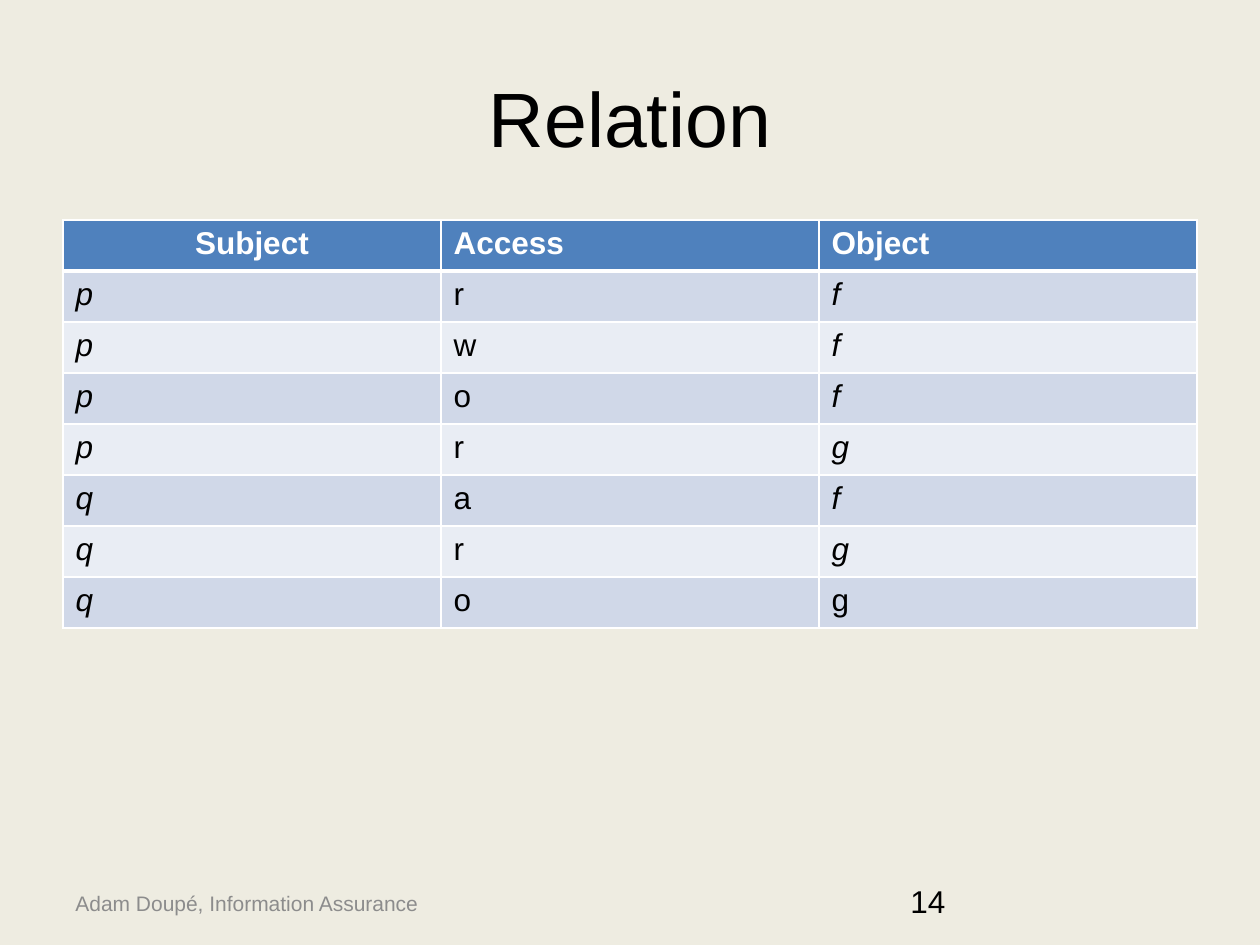
from dataclasses import dataclass

from lxml.etree import SubElement
from pptx import Presentation
from pptx.dml.color import RGBColor as RGB
from pptx.enum.text import MSO_ANCHOR as Anchor, PP_ALIGN as Align
from pptx.oxml.ns import qn
from pptx.util import Emu, Pt

PX = 914400 // 126


@dataclass(frozen=True)
class Theme:
    font: str = "Arial"
    paper: str = "EEECE1"
    ink: str = "000000"
    muted: str = "8C8C8C"
    white: str = "FFFFFF"
    header: str = "4F81BD"
    bands: tuple = ("D0D8E8", "E9EDF4")
    title_size: int = 44
    body_size: int = 18
    footer_size: int = 12
    thin: int = 1
    thick: int = 3


THEME = Theme()
HEADINGS = ("Subject", "Access", "Object")
RIGHTS = ("prf", "pwf", "pof", "prg", "qaf", "qrg", "qog")


def px(*lengths):
    return [Emu(length * PX) for length in lengths]


def write(frame, text, size, color=THEME.ink, align=Align.LEFT, **style):
    paragraph = frame.paragraphs[0]
    paragraph.alignment = align
    run = paragraph.add_run()
    run.text = text
    formats = {"name": THEME.font, "size": Pt(size), **style}
    for key, value in formats.items():
        setattr(run.font, key, value)
    run.font.color.rgb = RGB.from_string(color)


def add_title(slide, box, text):
    title = slide.shapes.title
    title.left, title.top, title.width, title.height = px(*box)
    title.text_frame.vertical_anchor = Anchor.MIDDLE
    write(title.text_frame, text, THEME.title_size, align=Align.CENTER)


def add_label(slide, box, text, size, color, anchor):
    frame = slide.shapes.add_textbox(*px(*box)).text_frame
    frame.word_wrap = True
    frame.vertical_anchor = anchor
    write(frame, text, size, color)


def add_borders(cell, top, bottom):
    widths = {"lnL": THEME.thin, "lnR": THEME.thin, "lnT": top, "lnB": bottom}
    for side, width in widths.items():
        line = SubElement(cell._tc.get_or_add_tcPr(), qn(f"a:{side}"), w=str(Pt(width)))
        fill = SubElement(line, qn("a:solidFill"))
        SubElement(fill, qn("a:srgbClr"), val=THEME.white)


def add_relation(slide, box, headings, rights):
    rows = [headings, *rights]
    table = slide.shapes.add_table(len(rows), len(headings), *px(*box)).table
    for r, row in enumerate(rows):
        for c, text in enumerate(row):
            cell = table.cell(r, c)
            # The rule between header and body is heavier
            add_borders(cell, THEME.thick if r == 1 else THEME.thin,
                        THEME.thick if r == 0 else THEME.thin)
            cell.fill.solid()
            if r == 0:
                fill, color = THEME.header, THEME.white
                style = {"bold": True, "align": Align.LEFT if c else Align.CENTER}
            else:
                fill, color = THEME.bands[(r - 1) % 2], THEME.ink
                # Subjects and objects are italic, except the last object
                last = (r, c) == (len(rows) - 1, len(row) - 1)
                style = {"bold": False, "italic": c != 1 and not last}
            cell.fill.fore_color.rgb = RGB.from_string(fill)
            write(cell.text_frame, text, THEME.body_size, color, **style)


def main():
    deck = Presentation()
    deck.slide_width, deck.slide_height = px(1260, 945)
    slide = deck.slides.add_slide(deck.slide_layouts[5])
    slide.background.fill.solid()
    slide.background.fill.fore_color.rgb = RGB.from_string(THEME.paper)

    # Footer
    add_label(slide, (63, 878, 537, 50), "Adam Doupé, Information Assurance",
              THEME.footer_size, THEME.muted, Anchor.MIDDLE)
    # Title
    add_title(slide, (63, 38, 1134, 158), "Relation")
    # Access relation
    add_relation(slide, (63, 220, 1134, 408), HEADINGS, RIGHTS)
    # Slide number
    add_label(slide, (898, 876, 294, 50), "14",
              THEME.body_size, THEME.ink, Anchor.TOP)

    deck.save("out.pptx")


if __name__ == "__main__":
    main()
